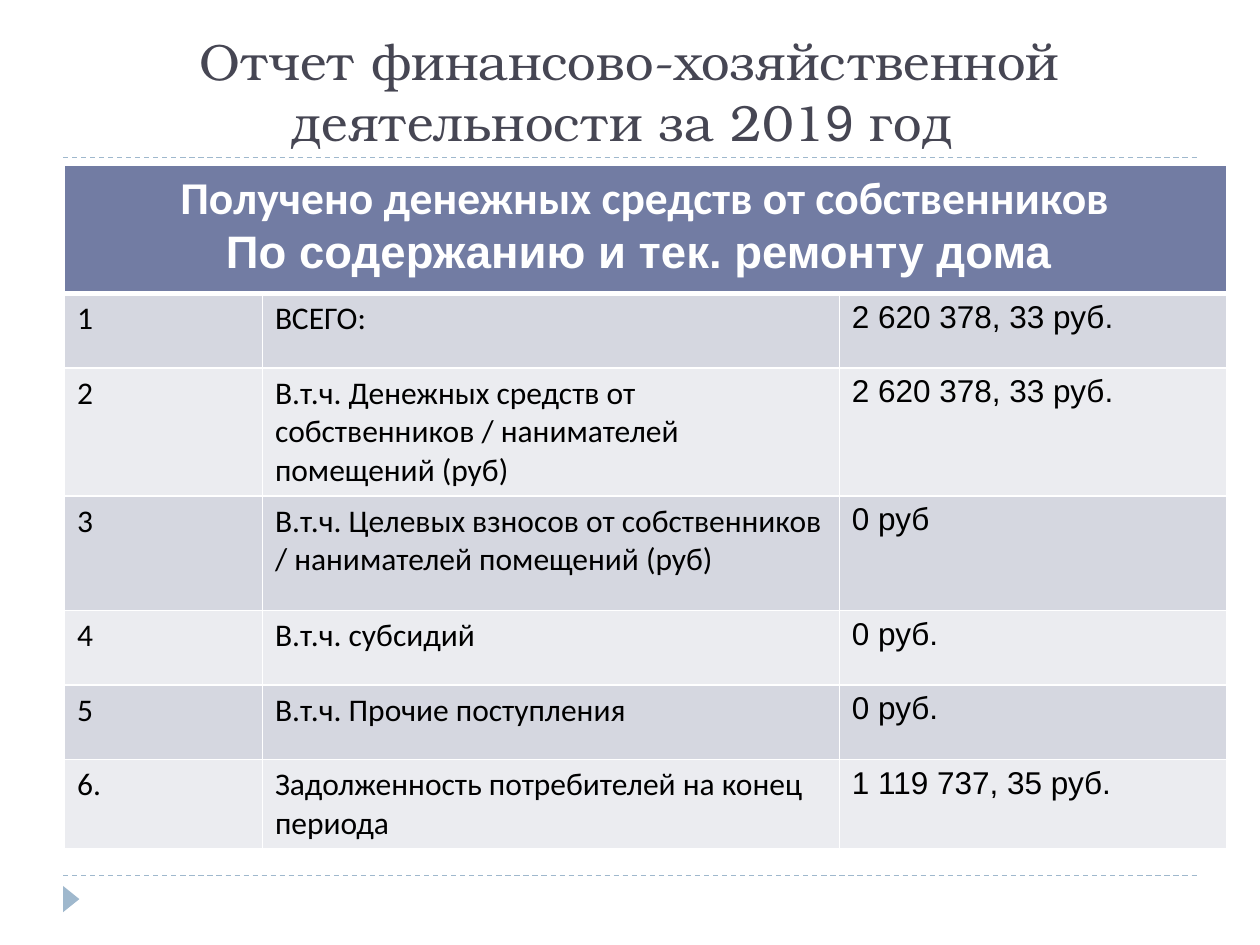
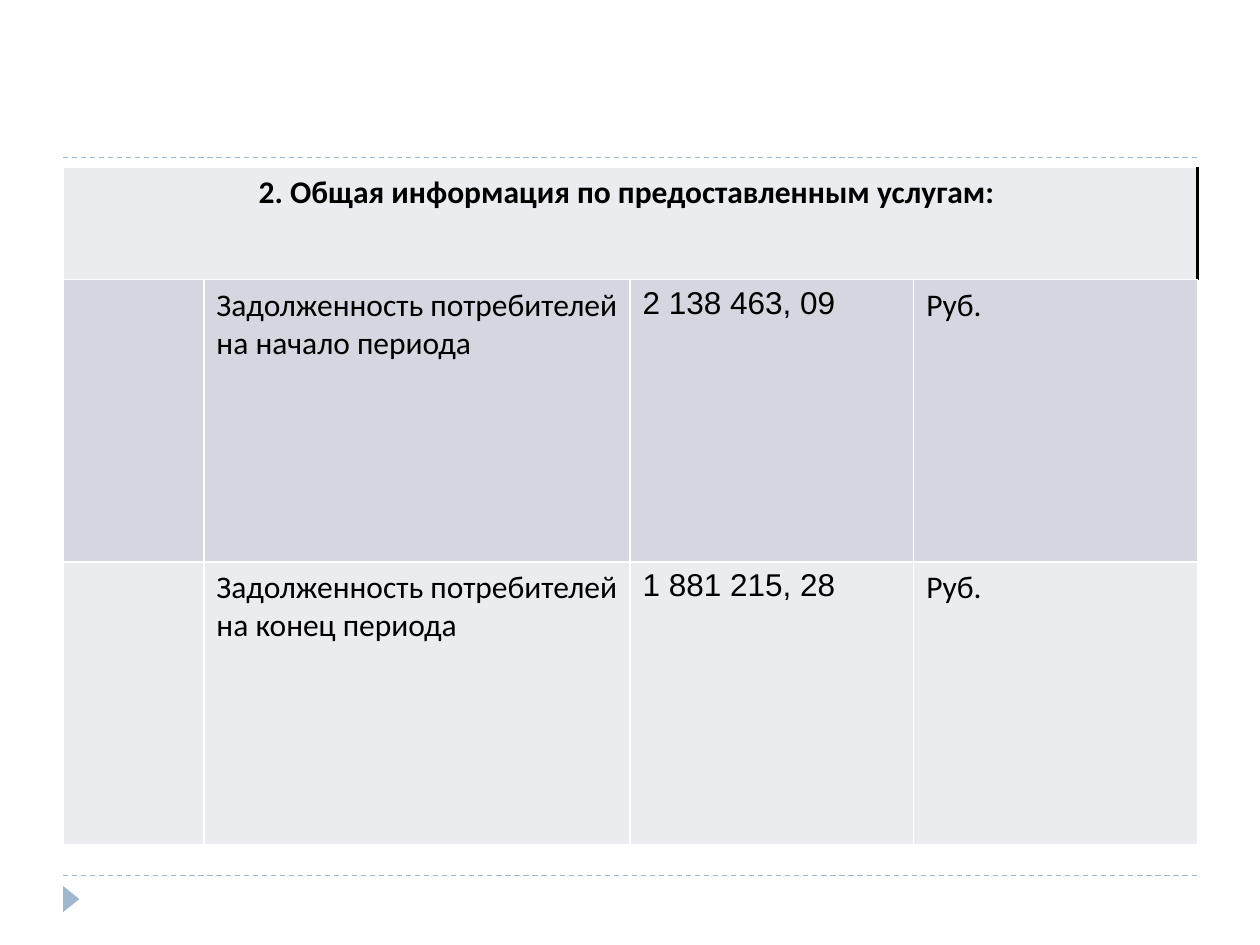
from lxml import etree
from pptx import Presentation
from pptx.dml.color import RGBColor
from pptx.enum.dml import MSO_LINE
from pptx.enum.shapes import MSO_CONNECTOR, MSO_SHAPE
from pptx.enum.text import MSO_ANCHOR, MSO_AUTO_SIZE, PP_ALIGN
from pptx.oxml.ns import qn
from pptx.util import Cm, Pt

COLORS = {
    "title": "464653", "accent": "9FB8CD", "header": "727CA3",
    "dark_band": "D5D7E0", "light_band": "EBECF0",
    "white": "FFFFFF", "black": "000000",
}
TITLE_FONT, TEXT_FONT, NUMBER_FONT = "TeX Gyre Bonum", "Calibri", "Arial"
CENTER = PP_ALIGN.CENTER
BOTTOM = MSO_ANCHOR.BOTTOM
STRAIGHT = MSO_CONNECTOR.STRAIGHT
TRIANGLE = MSO_SHAPE.ISOSCELES_TRIANGLE
DASH = MSO_LINE.DASH
TITLE_ONLY, BLANK = 5, 6
MARGIN, CONTENT_WIDTH = 1.27, 22.86
RULE_HEIGHTS = (3.18, 17.65)


def rgb(name):
    return RGBColor.from_string(COLORS[name])


def set_font(font, name, size, color, bold=False):
    font.name, font.size, font.bold = name, Pt(size), bold
    font.color.rgb = rgb(color)


def add_frame(slide):
    """Dashed rules and the footer marker shared by all slides."""
    for y in RULE_HEIGHTS:
        rule = slide.shapes.add_connector(
            STRAIGHT, Cm(MARGIN), Cm(y), Cm(MARGIN + CONTENT_WIDTH), Cm(y))
        rule.line.color.rgb = rgb("accent")
        rule.line.width = Pt(0.75)
        rule.line.dash_style = DASH
        etree.SubElement(rule._element.spPr, qn("a:effectLst"))
    marker = slide.shapes.add_shape(TRIANGLE, Cm(1.17), Cm(17.96), Cm(0.53), Cm(0.33))
    marker.rotation = 90
    marker.shadow.inherit = False
    marker.fill.solid()
    marker.fill.fore_color.rgb = rgb("accent")
    marker.line.fill.background()


def add_title(slide, parts):
    """Title made of (text, font name) parts."""
    title = slide.shapes.title
    title.left, title.top = Cm(MARGIN), Cm(0.64)
    title.width, title.height = Cm(CONTENT_WIDTH), Cm(2.54)
    frame = title.text_frame
    frame.word_wrap, frame.auto_size = True, MSO_AUTO_SIZE.NONE
    frame.vertical_anchor = BOTTOM
    paragraph = frame.paragraphs[0]
    paragraph.alignment = CENTER
    for text, font_name in parts:
        run = paragraph.add_run()
        run.text = text
        set_font(run.font, font_name, 29, "title")


def set_border(cell, side, color="white", width=1):
    properties = cell._tc.get_or_add_tcPr()
    line = etree.SubElement(properties, qn(f"a:ln{side}"), w=str(Pt(width)))
    fill = etree.SubElement(line, qn("a:solidFill"))
    etree.SubElement(fill, qn("a:srgbClr"), val=COLORS[color])


def style_cell(cell, fill, borders):
    """Borders come before the fill in the cell properties."""
    for side in "LRTB":
        set_border(cell, side, *borders.get(side, ()))
    cell.fill.solid()
    cell.fill.fore_color.rgb = rgb(fill)


def add_banded_table(slide, left, top, columns, heights, header, rows, bands,
                     header_fill, header_color, header_size, header_borders):
    """A merged header of (text, font) lines above banded rows."""
    table = slide.shapes.add_table(
        len(heights), len(columns), Cm(left), Cm(top),
        Cm(sum(columns)), Cm(sum(heights))).table
    table.first_row = table.horz_banding = False
    for column, width in zip(table.columns, columns):
        column.width = Cm(width)
    for row, height in zip(table.rows, heights):
        row.height = Cm(height)

    # Header
    for cell in table.rows[0].cells:
        style_cell(cell, header_fill, header_borders)
    title_cell = table.cell(0, 0)
    title_cell.merge(table.cell(0, len(columns) - 1))
    title_cell.text = "\n".join(text for text, _ in header)
    for paragraph, (_, font_name) in zip(title_cell.text_frame.paragraphs, header):
        paragraph.alignment = CENTER
        set_font(paragraph.font, font_name, header_size, header_color, True)

    # Body: the third column holds the amounts
    for i, values in enumerate(rows):
        top_border = {"T": header_borders["B"]} if i == 0 and "B" in header_borders else {}
        for j, value in enumerate(values):
            cell = table.cell(i + 1, j)
            style_cell(cell, bands[i % 2], top_border)
            cell.text = value
            set_font(cell.text_frame.paragraphs[0].font,
                     NUMBER_FONT if j == 2 else TEXT_FONT, 18, "black")


def build_income_slide(presentation):
    slide = presentation.slides.add_slide(presentation.slide_layouts[TITLE_ONLY])
    add_frame(slide)
    add_title(slide, [
        ("Отчет финансово-хозяйственной деятельности за 201", TITLE_FONT),
        ("9", NUMBER_FONT), (" год ", TITLE_FONT)])
    add_banded_table(
        slide, 1.3, 3.33, [3.99, 11.63, 7.8],
        [2.59, 1.5, 2.31, 2.31, 1.5, 1.5, 1.63],
        [("Получено денежных средств от собственников", TEXT_FONT),
         ("По содержанию и тек. ремонту дома ", NUMBER_FONT)],
        [("1", "ВСЕГО:", "2 620 378, 33 руб."),
         ("2", "В.т.ч. Денежных средств от собственников / нанимателей помещений (руб)",
          "2 620 378, 33 руб."),
         ("3", "В.т.ч. Целевых взносов от собственников / нанимателей помещений (руб)",
          "0 руб"),
         ("4", "В.т.ч. субсидий", "0 руб."),
         ("5", "В.т.ч. Прочие поступления", "0 руб."),
         ("6.", "Задолженность потребителей на конец периода", "1 119 737, 35 руб.")],
        bands=("dark_band", "light_band"), header_fill="header",
        header_color="white", header_size=26, header_borders={"B": ("white", 3)})


def build_debt_slide(presentation):
    slide = presentation.slides.add_slide(presentation.slide_layouts[BLANK])
    add_frame(slide)
    add_banded_table(
        slide, MARGIN, 3.38, [2.84, 8.59, 5.72, 5.72], [2.26, 5.69, 5.69],
        [("2. Общая информация по предоставленным услугам: ", TEXT_FONT)],
        [("", "Задолженность потребителей на начало периода", "2 138 463, 09", "Руб."),
         ("", "Задолженность потребителей на конец периода", "1 881 215, 28", "Руб.")],
        bands=("dark_band", "light_band"), header_fill="light_band",
        header_color="black", header_size=18, header_borders={"R": ("black", 2.25)})


def main():
    presentation = Presentation()
    presentation.slide_width, presentation.slide_height = Cm(25.4), Cm(19.05)
    build_income_slide(presentation)
    build_debt_slide(presentation)
    presentation.save("out.pptx")


if __name__ == "__main__":
    main()
